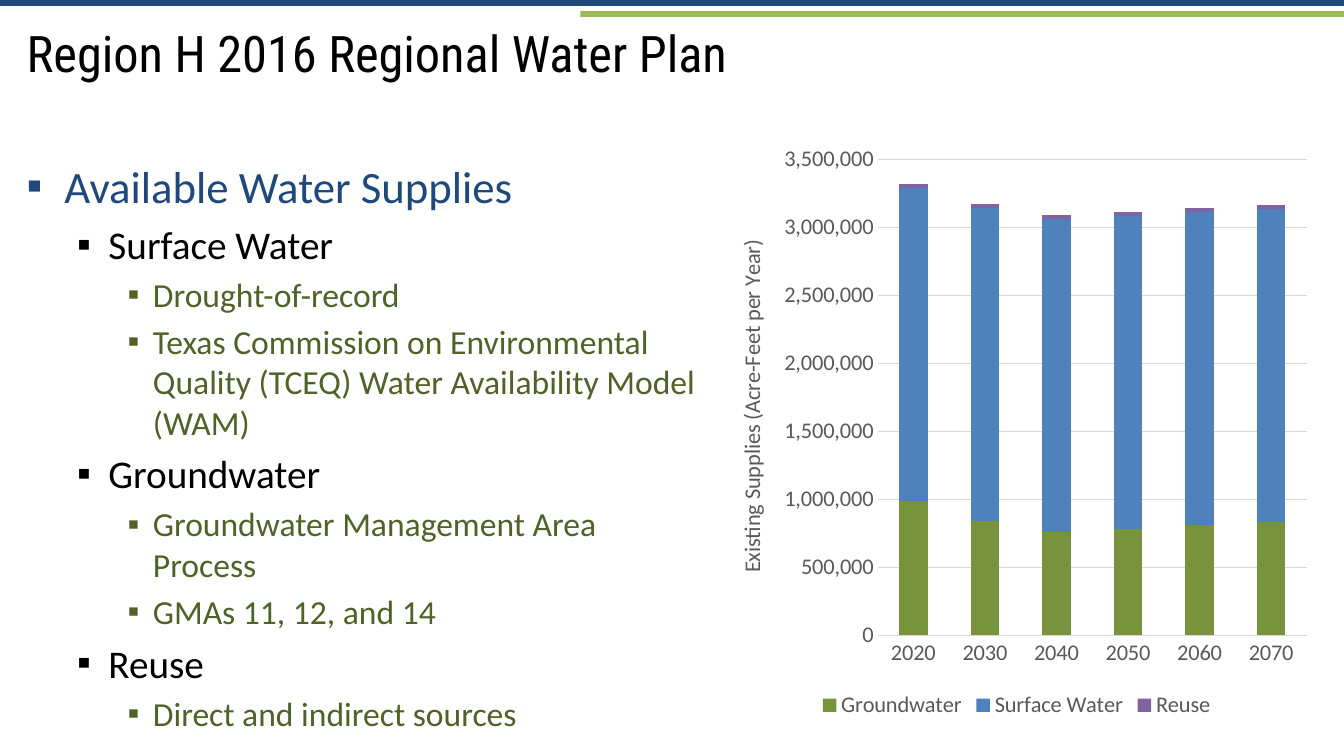
from lxml.etree import SubElement
from pptx import Presentation
from pptx.chart.data import CategoryChartData
from pptx.dml.color import RGBColor
from pptx.enum.chart import XL_CHART_TYPE, XL_LEGEND_POSITION, XL_TICK_MARK
from pptx.enum.shapes import MSO_SHAPE
from pptx.enum.text import MSO_ANCHOR, MSO_AUTO_SIZE, PP_ALIGN
from pptx.oxml.ns import qn
from pptx.util import Cm, Pt

COLORS = {"navy": "1F497D", "lime": "9BBB59", "black": "000000", "moss": "4F6228",
          "gray": "595959", "grid": "D9D9D9", "Groundwater": "77933C",
          "Surface Water": "4F81BD", "Reuse": "8064A2"}


def style(font, size, color, name="Calibri"):
    values = {"size": Pt(size), "name": name, "bold": False}
    for key, value in values.items():
        setattr(font, key, value)
    font.color.rgb = RGBColor.from_string(COLORS[color])


def place(layout, **fractions):
    """Fix a chart part's place as fractions of the chart's size."""
    manual = SubElement(layout, qn("c:manualLayout"))
    for tag, value in fractions.items():
        SubElement(manual, qn(f"c:{tag}")).set("val", str(value))


prs = Presentation()
prs.slide_width, prs.slide_height = Cm(33.87), Cm(19.05)
s = prs.slides.add_slide(prs.slide_layouts[1])

# Header bars
for left, top, width, color in [(0, 0, 33.87, "navy"), (14.63, 0.28, 19.24, "lime")]:
    bar = s.shapes.add_shape(MSO_SHAPE.RECTANGLE, Cm(left), Cm(top), Cm(width), Cm(0.15))
    bar.shadow.inherit = False
    bar.fill.solid()
    bar.fill.fore_color.rgb = RGBColor.from_string(COLORS[color])
    bar.line.fill.background()

# Title
title = s.shapes.title
title.left, title.top, title.width, title.height = Cm(0.42), Cm(0.42), Cm(32.82), Cm(2.34)
tf = title.text_frame
tf.text = "Region H 2016 Regional Water Plan"
tf.auto_size = MSO_AUTO_SIZE.NONE
tf.vertical_anchor = MSO_ANCHOR.TOP
tf.paragraphs[0].alignment = PP_ALIGN.LEFT
style(tf.paragraphs[0].runs[0].font, 36, "black", "Roboto Condensed")

# Outline: size, colour, text indent and hanging indent for each level
LEVELS = [(32, "navy", 0.95, 0.95), (28, "black", 2.06, 0.79), (24, "moss", 3.18, 0.64)]
SUPPLIES = [
    (0, "Available Water Supplies"),
    (1, "Surface Water"),
    (2, "Drought-of-record"),
    (2, "Texas Commission on Environmental Quality (TCEQ) Water Availability Model (WAM)"),
    (1, "Groundwater"),
    (2, "Groundwater Management Area Process"),
    (2, "GMAs 11, 12, and 14"),
    (1, "Reuse"),
    (2, "Direct and indirect sources"),
]
body = s.placeholders[1]
body.left, body.top, body.width, body.height = Cm(0.42), Cm(3.81), Cm(17.58), Cm(14.6)
tf = body.text_frame
tf.auto_size = MSO_AUTO_SIZE.NONE
tf.margin_top = Cm(0.18)
for i, (level, text) in enumerate(SUPPLIES):
    size, color, indent, hanging = LEVELS[level]
    p = tf.add_paragraph() if i else tf.paragraphs[0]
    p.level = level
    pPr = p._p.get_or_add_pPr()
    pPr.set("marL", str(Cm(indent)))
    pPr.set("indent", str(-Cm(hanging)))
    SubElement(pPr, qn("a:buFont")).set("typeface", "Arial")
    SubElement(pPr, qn("a:buChar")).set("char", "▪")
    p.line_spacing = 1.0
    p.space_before = Pt(0.2 * size if i else 0)
    r = p.add_run()
    r.text = text
    style(r.font, size, color)

# Chart of supplies
data = CategoryChartData(number_format="#,##0")
data.categories = [str(year) for year in range(2020, 2071, 10)]
data.add_series("Groundwater", [990000, 840000, 760000, 780000, 810000, 830000])
data.add_series("Surface Water", [2300000] * 6)
data.add_series("Reuse", [30000] * 6)
chart = s.shapes.add_chart(XL_CHART_TYPE.COLUMN_STACKED, Cm(18), Cm(3.42),
                           Cm(15.24), Cm(14.81), data).chart
style(chart.font, 10, "black")
chart.has_title = False
plot = chart.plots[0]
plot.gap_width, plot.overlap, plot.vary_by_categories = 150, 100, False
for series in plot.series:
    series.format.fill.solid()
    series.format.fill.fore_color.rgb = RGBColor.from_string(COLORS[series.name])

years, volumes = chart.category_axis, chart.value_axis
for axis in (years, volumes):
    axis.major_tick_mark = axis.minor_tick_mark = XL_TICK_MARK.NONE
    style(axis.tick_labels.font, 16, "gray")
for line in (years.format.line, volumes.major_gridlines.format.line):
    line.color.rgb = RGBColor.from_string(COLORS["grid"])
    line.width = Pt(0.75)
volumes.format.line.fill.background()
volumes.minimum_scale, volumes.maximum_scale, volumes.major_unit = 0, 3500000, 500000
volumes.tick_labels.number_format = "#,##0"
volumes.tick_labels.number_format_is_linked = False

tf = volumes.axis_title.text_frame
tf.text = "Existing Supplies (Acre-Feet per Year)"
style(tf.paragraphs[0].runs[0].font, 16, "gray")
tf._txBody.find(qn("a:bodyPr")).set("rot", "-5400000")

chart.has_legend = True
chart.legend.position = XL_LEGEND_POSITION.BOTTOM
chart.legend.include_in_layout = False
style(chart.legend.font, 16, "gray")

plot_area = chart._chartSpace.chart.plotArea
axis_title = volumes.axis_title._element
for parent, index in [(plot_area, 0), (axis_title, 1)]:
    if parent.find(qn("c:layout")) is None:
        parent.insert(index, parent.makeelement(qn("c:layout"), {}))
place(plot_area.find(qn("c:layout")), layoutTarget="inner", xMode="edge", yMode="edge",
      x=0.27, y=0.04, w=0.71, h=0.81)
place(axis_title.find(qn("c:layout")), xMode="edge", yMode="edge", x=0.03, y=0.17)

prs.save("out.pptx")
